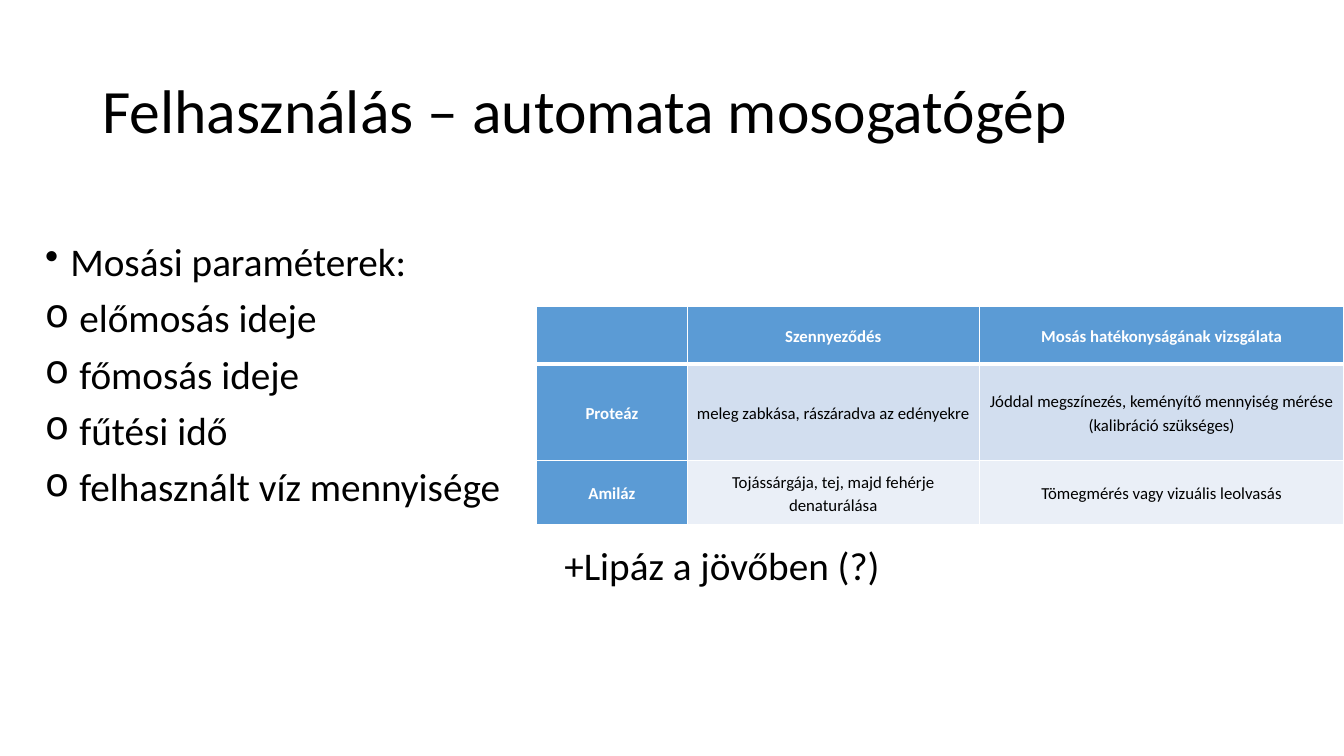
from lxml.etree import SubElement
from pptx import Presentation
from pptx.dml.color import RGBColor
from pptx.enum.text import MSO_ANCHOR, PP_ALIGN
from pptx.oxml.ns import qn
from pptx.util import Inches, Pt

COLUMNS, ROWS = 160, 90
CELL = Inches(1 / 12)
FONT = "Calibri"
COLORS = {
    "text": "000000",
    "white": "FFFFFF",
    "header": "5B9BD5",
    "odd_row": "D2DEEF",
    "even_row": "EAEFF7",
}

PARAMETERS = [
    ("•", "Mosási paraméterek:"),
    ("o", "előmosás ideje"),
    ("o", "főmosás ideje"),
    ("o", "fűtési idő"),
    ("o", "felhasznált víz mennyisége"),
]
BULLET_INDENTS = {"•": 0.25, "o": 0.34}

ENZYMES = [
    ["", "Szennyeződés", "Mosás hatékonyságának vizsgálata"],
    ["Proteáz", "meleg zabkása, rászáradva az edényekre",
     "Jóddal megszínezés, keményítő mennyiség mérése (kalibráció szükséges)"],
    ["Amiláz", "Tojássárgája, tej, majd fehérje denaturálása",
     "Tömegmérés vagy vizuális leolvasás"],
]
ENZYME_WIDTHS = [17.9, 34.8, 43.4]
ENZYME_HEIGHTS = [6.8, 11.5, 7.7]


def grid(*cells):
    """Turn counts of grid cells into lengths."""
    return [round(count * CELL) for count in cells]


def color(name):
    return RGBColor.from_string(COLORS[name])


def style(paragraph, size, color_name="text", bold=False):
    font = paragraph.font
    for target in [font] + [span.font for span in paragraph.runs]:
        target.name = FONT
        target.size = Pt(size)
        target.bold = bold
        target.color.rgb = color(color_name)


def add_text(slide, place, lines, size, anchor=MSO_ANCHOR.TOP, spacing=1.0):
    """Add a text box and return its paragraphs, one for each line."""
    frame = slide.shapes.add_textbox(*grid(*place)).text_frame
    frame.word_wrap = True
    frame.vertical_anchor = anchor
    frame.text = "\n".join(lines)
    for paragraph in frame.paragraphs:
        paragraph.line_spacing = spacing
        style(paragraph, size)
    return frame.paragraphs


def add_bullet(paragraph, character):
    indent = Inches(BULLET_INDENTS[character])
    properties = paragraph._p.get_or_add_pPr()
    properties.set("marL", str(indent))
    properties.set("indent", str(-indent))
    bullet = properties.makeelement(qn("a:buChar"), {"char": character})
    properties.insert_element_before(bullet, "a:tabLst", "a:defRPr", "a:extLst")


def add_bullet_list(slide, place, items, size):
    paragraphs = add_text(slide, place, [line for _, line in items], size, spacing=0.9)
    for index, (paragraph, (character, _)) in enumerate(zip(paragraphs, items)):
        if index:
            paragraph.space_before = Pt(10)
        add_bullet(paragraph, character)


def add_borders(cell, widths):
    """Draw white borders; widths are points for left, right, top and bottom."""
    properties = cell._tc.get_or_add_tcPr()
    for side, width in zip("LRTB", widths):
        line = SubElement(properties, qn(f"a:ln{side}"), w=str(Pt(width)))
        fill = SubElement(line, qn("a:solidFill"))
        SubElement(fill, qn("a:srgbClr"), val=COLORS["white"])


def fill_cell(cell, text, row, column):
    heading = row == 0 or column == 0
    top, bottom = {0: (1, 3), 1: (3, 1)}.get(row, (1, 1))
    add_borders(cell, (1, 1, top, bottom))
    cell.fill.solid()
    band = "odd_row" if row % 2 else "even_row"
    cell.fill.fore_color.rgb = color("header" if heading else band)
    cell.vertical_anchor = MSO_ANCHOR.MIDDLE
    cell.margin_left = cell.margin_right = Inches(0.07)
    cell.margin_top = cell.margin_bottom = 0
    cell.text_frame.text = text
    paragraph = cell.text_frame.paragraphs[0]
    paragraph.alignment = PP_ALIGN.CENTER
    paragraph.line_spacing = 1.15
    style(paragraph, 12, "white" if heading else "text", heading)


def add_table(slide, left, top, widths, heights, rows):
    place = grid(left, top, sum(widths), sum(heights))
    table = slide.shapes.add_table(len(heights), len(widths), *place).table
    for column, width in zip(table.columns, grid(*widths)):
        column.width = width
    for row, height in zip(table.rows, grid(*heights)):
        row.height = height
    for row, texts in enumerate(rows):
        for column, text in enumerate(texts):
            fill_cell(table.cell(row, column), text, row, column)


def main():
    deck = Presentation()
    deck.slide_width, deck.slide_height = grid(COLUMNS, ROWS)
    slide = deck.slides.add_slide(deck.slide_layouts[6])
    add_text(slide, (11, 4.8, 138, 17.4), ["Felhasználás – automata mosogatógép"],
             44, MSO_ANCHOR.MIDDLE, 0.9)
    add_bullet_list(slide, (4.2, 28.3, 138, 57.1), PARAMETERS, 28)
    add_text(slide, (66, 63.8, 79.3, 6.8), ["+Lipáz a jövőben (?)"], 28)
    add_table(slide, 63.9, 36.5, ENZYME_WIDTHS, ENZYME_HEIGHTS, ENZYMES)
    deck.save("out.pptx")


if __name__ == "__main__":
    main()
